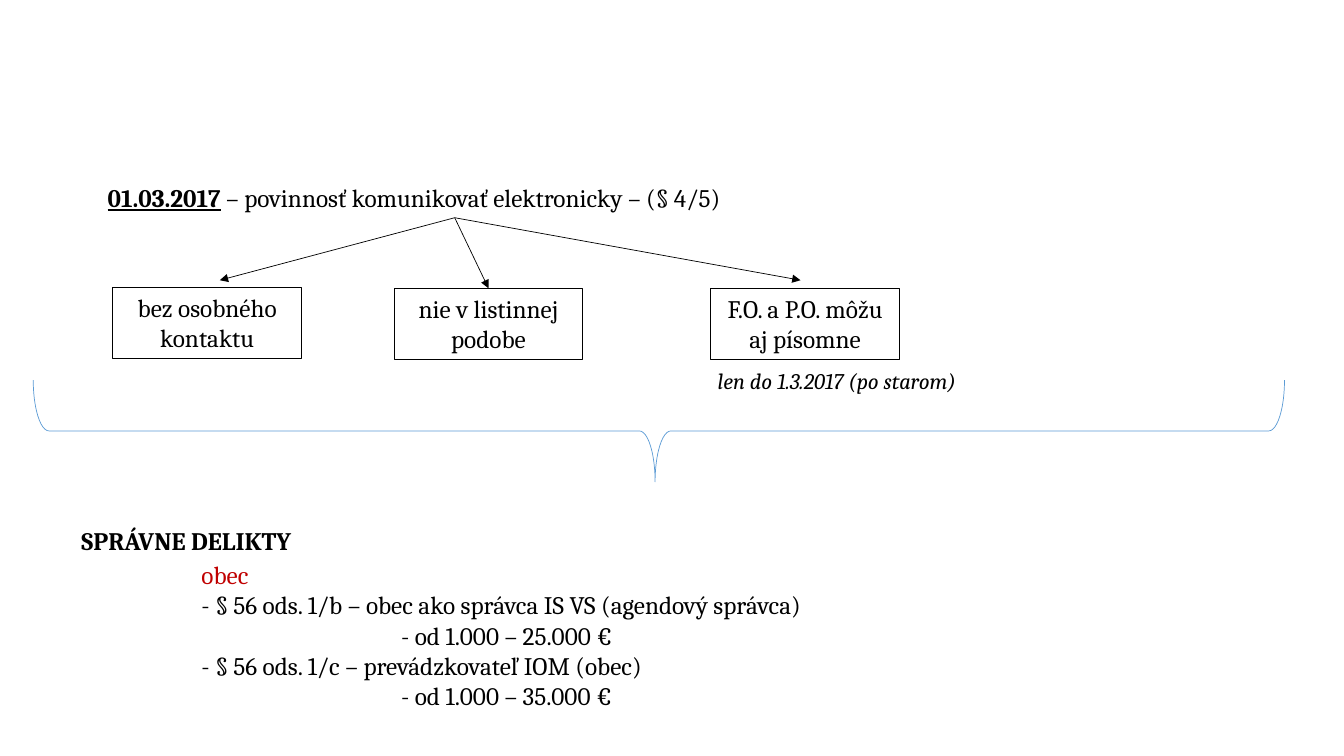
from lxml import etree
from pptx import Presentation
from pptx.dml.color import RGBColor
from pptx.enum.shapes import MSO_CONNECTOR, MSO_SHAPE
from pptx.enum.text import MSO_ANCHOR, MSO_AUTO_SIZE, PP_ALIGN
from pptx.oxml.ns import qn
from pptx.util import Inches, Pt

BLACK = RGBColor(0x00, 0x00, 0x00)
RED = RGBColor(0xC0, 0x00, 0x00)
BLUE = RGBColor(0x5B, 0x9B, 0xD5)
FONT = "Cambria"

DATE = "01.03.2017"
DUTY = " – povinnosť komunikovať elektronicky – (§ 4/5)"
NOTE = "len do 1.3.2017 (po starom)"
OFFENCES = "SPRÁVNE DELIKTY"
# text, colour, indent in inches
FINES = [
    ("obec", RED, 0),
    ("- § 56 ods. 1/b – obec ako správca IS VS (agendový správca)", BLACK, 0),
    ("- od 1.000 – 25.000 €", BLACK, 1.98),
    ("- § 56 ods. 1/c – prevádzkovateľ IOM (obec)", BLACK, 0),
    ("- od 1.000 – 35.000 €", BLACK, 1.98),
]
# text, left, top
RULES = [
    ("bez osobného kontaktu", 1.12, 2.85),
    ("nie v listinnej podobe", 3.91, 2.86),
    ("F.O. a P.O. môžu aj písomne", 7.05, 2.86),
]
RULE_W, RULE_H = 1.87, 0.71
ARROW_START = (4.51, 2.16)
ARROW_ENDS = [(2.18, 2.78), (4.85, 2.86), (7.94, 2.78)]


def style(p, size=18, color=BLACK):
    p.font.name, p.font.size, p.font.color.rgb = FONT, Pt(size), color


def add_text(s, left, top, width, height, wrap=False):
    tf = s.shapes.add_textbox(*map(Inches, (left, top, width, height))).text_frame
    tf.word_wrap = wrap
    tf.auto_size = MSO_AUTO_SIZE.SHAPE_TO_FIT_TEXT
    return tf


def add_outline(s, kind, left, top, width, height, color, weight):
    sp = s.shapes.add_shape(kind, *map(Inches, (left, top, width, height)))
    sp.shadow.inherit = False
    sp.fill.background()
    sp.line.color.rgb, sp.line.width = color, Pt(weight)
    return sp


def add_rule(s, text, left, top):
    sp = add_outline(s, MSO_SHAPE.RECTANGLE, left, top, RULE_W, RULE_H, BLACK, 0.75)
    tf = sp.text_frame
    tf.word_wrap = True
    tf.vertical_anchor = MSO_ANCHOR.TOP
    p = tf.paragraphs[0]
    p.text, p.alignment = text, PP_ALIGN.CENTER
    style(p)
    return sp


def add_arrow(s, end):
    line = s.shapes.add_connector(MSO_CONNECTOR.STRAIGHT, *map(Inches, ARROW_START + end))
    line.line.color.rgb, line.line.width = BLACK, Pt(0.5)
    etree.SubElement(line.line._get_or_add_ln(), qn("a:tailEnd"), type="triangle")
    etree.SubElement(line._element.spPr, qn("a:effectLst"))
    return line


def main():
    prs = Presentation()
    prs.slide_width, prs.slide_height = Inches(13.33), Inches(7.5)
    s = prs.slides.add_slide(prs.slide_layouts[6])

    p = add_text(s, 0.97, 1.76, 6.77, 0.4).paragraphs[0]
    style(p)
    r = p.add_run()
    r.text, r.font.bold, r.font.underline = DATE, True, True
    p.add_run().text = DUTY

    boxes = [add_rule(s, *rule) for rule in RULES]
    arrows = [add_arrow(s, end) for end in ARROW_ENDS]
    arrows[1].end_connect(boxes[1], 0)

    p = add_text(s, 7.02, 3.59, 2.87, 0.37).paragraphs[0]
    p.text, p.font.italic = NOTE, True
    style(p, 16)

    brace = add_outline(s, MSO_SHAPE.LEFT_BRACE, 6.03, -1.93, 1.01, 12.41, BLUE, 0.5)
    brace.rotation = 270
    brace.adjustments[0], brace.adjustments[1] = 0.155, 0.497

    p = add_text(s, 0.71, 5.16, 2.37, 0.4).paragraphs[0]
    p.text, p.font.bold = OFFENCES, True
    style(p)

    tf = add_text(s, 1.9, 5.5, 6.53, 1.62, wrap=True)
    for i, (text, color, indent) in enumerate(FINES):
        p = tf.add_paragraph() if i else tf.paragraphs[0]
        p.text = text
        p._p.get_or_add_pPr().set("marL", str(Inches(indent)))
        style(p, color=color)

    prs.save("out.pptx")


if __name__ == "__main__":
    main()
